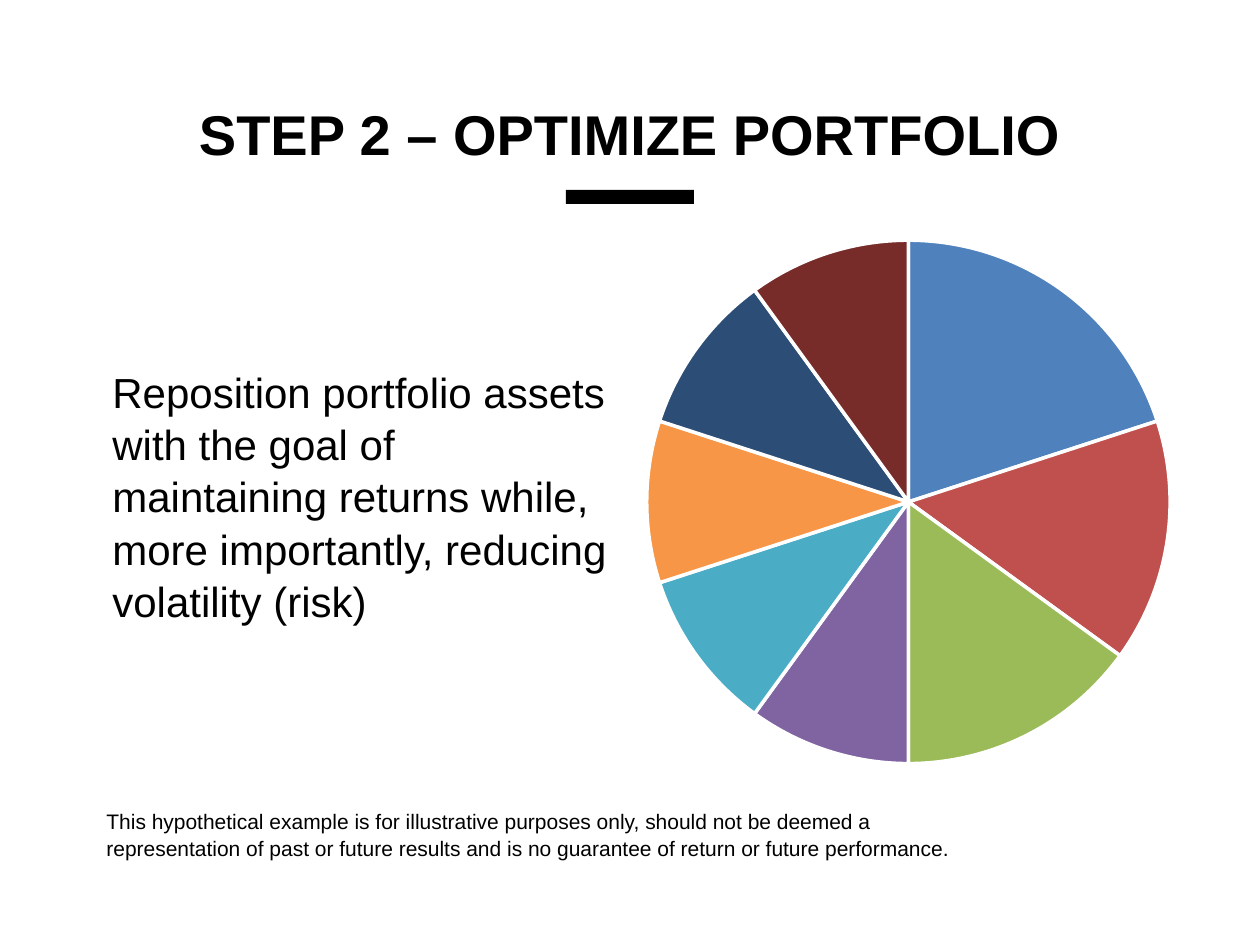
from pptx import Presentation
from pptx.chart.data import CategoryChartData
from pptx.dml.color import RGBColor
from pptx.enum.chart import XL_CHART_TYPE
from pptx.enum.shapes import MSO_SHAPE
from pptx.enum.text import MSO_ANCHOR, PP_ALIGN
from pptx.oxml import parse_xml
from pptx.oxml.ns import nsdecls
from pptx.util import Emu, Pt

SCALE = 914400 // 126
FONT = "Arial"
BLACK = "000000"
WHITE = "FFFFFF"
SLICES = [
    (20, "4F81BD"), (15, "C0504D"), (15, "9BBB59"), (10, "8064A2"),
    (10, "4BACC6"), (10, "F79646"), (10, "2C4D75"), (10, "772C2A"),
]


def px(length):
    """Turn px into EMU."""
    return Emu(length * SCALE)


def color(hex_code):
    """Turn a hex string into a colour."""
    return RGBColor.from_string(hex_code)


def add_text(page, box, words, size, bold=False, align=PP_ALIGN.LEFT,
             anchor=MSO_ANCHOR.TOP, spacing=1.0):
    """Place one paragraph of text in a box."""
    frame = page.shapes.add_textbox(*map(px, box)).text_frame
    frame.word_wrap = True
    frame.vertical_anchor = anchor
    para = frame.paragraphs[0]
    para.alignment = align
    para.line_spacing = spacing
    span = para.add_run()
    span.text = words
    span.font.name = FONT
    span.font.size = Pt(size)
    span.font.bold = bold
    span.font.color.rgb = color(BLACK)


def add_heading(page, box):
    """Place the title with the short bar centred below it."""
    left, top, width, height = box
    bar_width, bar_height = 128, 14
    add_text(page, (left, top, width, height), "STEP 2 – OPTIMIZE PORTFOLIO", 32,
             bold=True, align=PP_ALIGN.CENTER, anchor=MSO_ANCHOR.MIDDLE)
    bar_box = (left + (width - bar_width) // 2, top + height - 8, bar_width, bar_height)
    bar = page.shapes.add_shape(MSO_SHAPE.RECTANGLE, *map(px, bar_box))
    bar.shadow.inherit = False
    bar.fill.solid()
    bar.fill.fore_color.rgb = color(BLACK)
    bar.line.fill.background()


def add_allocation_pie(page, box):
    """Place the pie of portfolio shares."""
    data = CategoryChartData()
    data.categories = [str(number) for number in range(1, len(SLICES) + 1)]
    data.add_series("Series 1", [share for share, _ in SLICES])
    chart = page.shapes.add_chart(XL_CHART_TYPE.PIE, *map(px, box), data).chart
    chart.has_legend = False
    chart.has_title = False
    chart.font.name = FONT
    chart.font.size = Pt(10)
    chart.font.color.rgb = color(BLACK)
    plot = chart.plots[0]
    plot.vary_by_categories = True
    for index, (_, fill) in enumerate(SLICES):
        style = plot.series[0].points[index].format
        style.fill.solid()
        style.fill.fore_color.rgb = color(fill)
        style.line.color.rgb = color(WHITE)
        style.line.width = Pt(2)
    plot_area = chart.element.chart.plotArea
    for layout in plot_area.findall("{*}layout"):
        plot_area.remove(layout)
    plot_area.insert(0, parse_xml(
        f'<c:layout {nsdecls("c")}><c:manualLayout><c:layoutTarget val="inner"/>'
        '<c:xMode val="edge"/><c:yMode val="edge"/><c:x val="0.03"/><c:y val="0.08"/>'
        '<c:w val="0.94"/><c:h val="0.84"/></c:manualLayout></c:layout>'))


def main():
    """Build the slide and save it."""
    deck = Presentation()
    deck.slide_width, deck.slide_height = px(1260), px(945)
    page = deck.slides.add_slide(deck.slide_layouts[6])
    page.background.fill.solid()
    page.background.fill.fore_color.rgb = color(WHITE)
    add_allocation_pie(page, (630, 190, 557, 624))
    add_heading(page, (63, 68, 1134, 130))
    add_text(page, (100, 358, 529, 450),
             "Reposition portfolio assets with the goal of maintaining returns while, "
             "more importantly, reducing volatility (risk)", 24, spacing=1.04)
    add_text(page, (94, 800, 906, 88),
             "This hypothetical example is for illustrative purposes only, should not be "
             "deemed a representation of past or future results and is no guarantee of "
             "return or future performance.", 12, spacing=1.08)
    deck.save("out.pptx")


if __name__ == "__main__":
    main()
